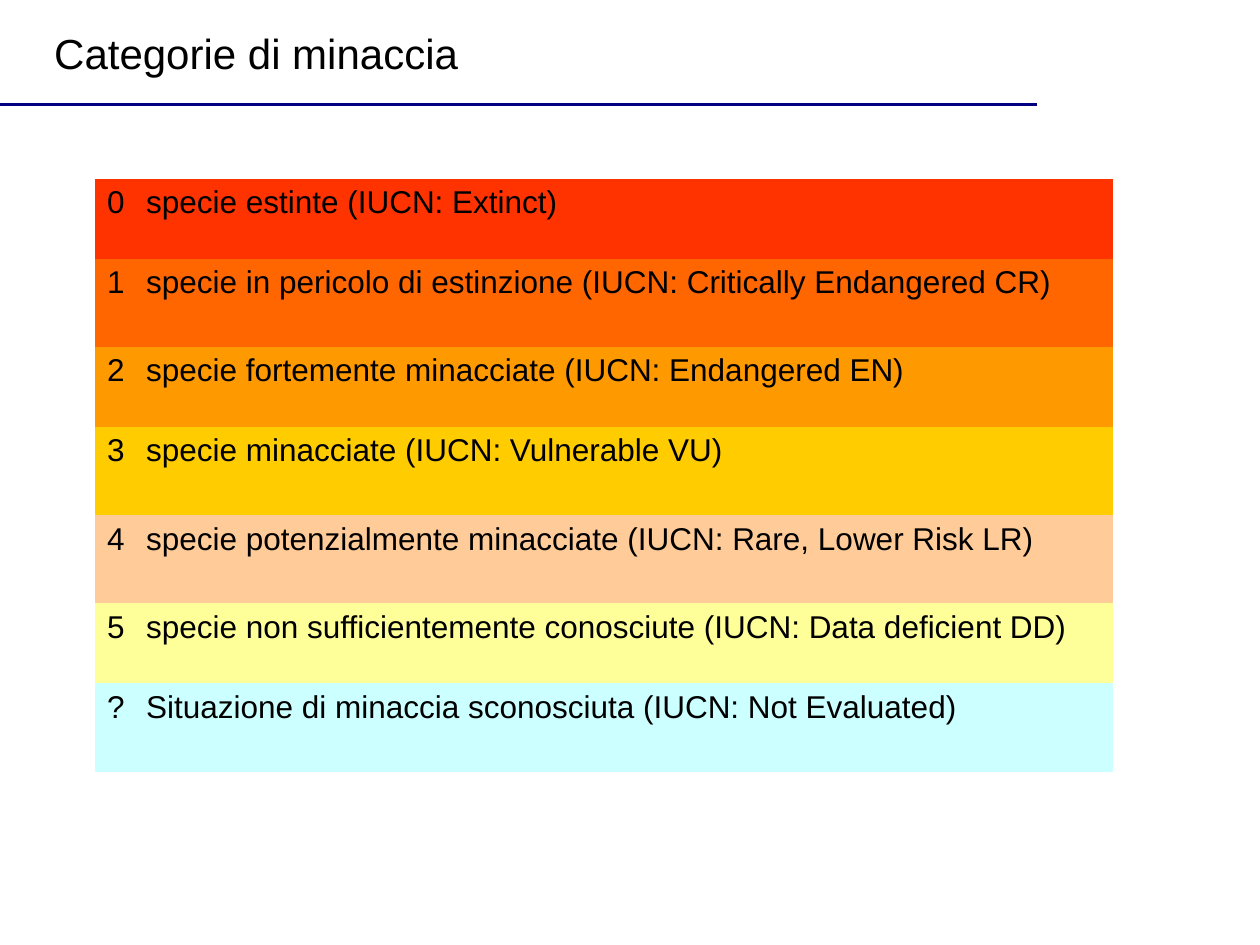
from lxml.etree import SubElement
from pptx import Presentation
from pptx.dml.color import RGBColor
from pptx.enum.shapes import MSO_CONNECTOR
from pptx.enum.text import MSO_ANCHOR, PP_ALIGN
from pptx.oxml.ns import qn
from pptx.util import Inches, Pt

COLORS = {
    "text": "000000", "rule": "000080",
    "extinct": "FF3300", "critical": "FF6600", "endangered": "FF9900",
    "vulnerable": "FFCC00", "rare": "FFCC99", "deficient": "FFFF99",
    "unknown": "CCFFFF",
}
LOW, HIGH = 0.635, 0.70  # the two row heights
CATEGORIES = [
    ("0", "specie estinte (IUCN: Extinct)", "extinct", LOW),
    ("1", "specie in pericolo di estinzione (IUCN: Critically Endangered CR)", "critical", HIGH),
    ("2", "specie fortemente minacciate (IUCN: Endangered EN)", "endangered", LOW),
    ("3", "specie minacciate (IUCN: Vulnerable VU)", "vulnerable", HIGH),
    ("4", "specie potenzialmente minacciate (IUCN: Rare, Lower Risk LR)", "rare", HIGH),
    ("5", "specie non sufficientemente conosciute (IUCN: Data deficient DD)", "deficient", LOW),
    ("?", "Situazione di minaccia sconosciuta (IUCN: Not Evaluated)", "unknown", HIGH),
]
COLUMNS = [0.31, 7.77]


def write(frame, text, size=18, color="text", font="Arial"):
    paragraph = frame.paragraphs[0]
    paragraph.alignment = PP_ALIGN.LEFT
    run = paragraph.add_run()
    run.text = text
    run.font.name = font
    run.font.size = Pt(size)
    run.font.color.rgb = RGBColor.from_string(COLORS[color])


prs = Presentation()
prs.slide_width, prs.slide_height = Inches(10), Inches(7.5)
slide = prs.slides.add_slide(prs.slide_layouts[5])

# Heading
heading = slide.shapes.title
heading.left, heading.top = Inches(0.33), Inches(0.17)
heading.width, heading.height = prs.slide_width, Inches(0.5)
heading.text_frame.vertical_anchor = MSO_ANCHOR.TOP
write(heading.text_frame, "Categorie di minaccia", size=24)

# Threat categories
threats = slide.shapes.add_table(
    len(CATEGORIES), len(COLUMNS), Inches(0.75), Inches(1.42),
    Inches(sum(COLUMNS)), Inches(sum(height for *_, height in CATEGORIES))).table
threats.first_row = threats.horz_banding = False
for column, width in zip(threats.columns, COLUMNS):
    column.width = Inches(width)
for row, (code, meaning, color, height) in zip(threats.rows, CATEGORIES):
    row.height = Inches(height)
    for cell, text in zip(row.cells, (code, meaning)):
        cell.fill.solid()
        cell.fill.fore_color.rgb = RGBColor.from_string(COLORS[color])
        cell.margin_right = 0
        write(cell.text_frame, text)
        # The table style's white grid is switched off
        for position, side in enumerate(("a:lnL", "a:lnR", "a:lnT", "a:lnB")):
            border = SubElement(cell._tc.tcPr, qn(side), w="0")
            SubElement(border, qn("a:noFill"))
            cell._tc.tcPr.insert(position, border)

# Rule under the heading
rule = slide.shapes.add_connector(
    MSO_CONNECTOR.STRAIGHT, 0, Inches(0.83), Inches(8.23), Inches(0.83))
rule.line.color.rgb = RGBColor.from_string(COLORS["rule"])
rule.line.width = Pt(2)
SubElement(rule._element.spPr, qn("a:effectLst"))

prs.save("out.pptx")
